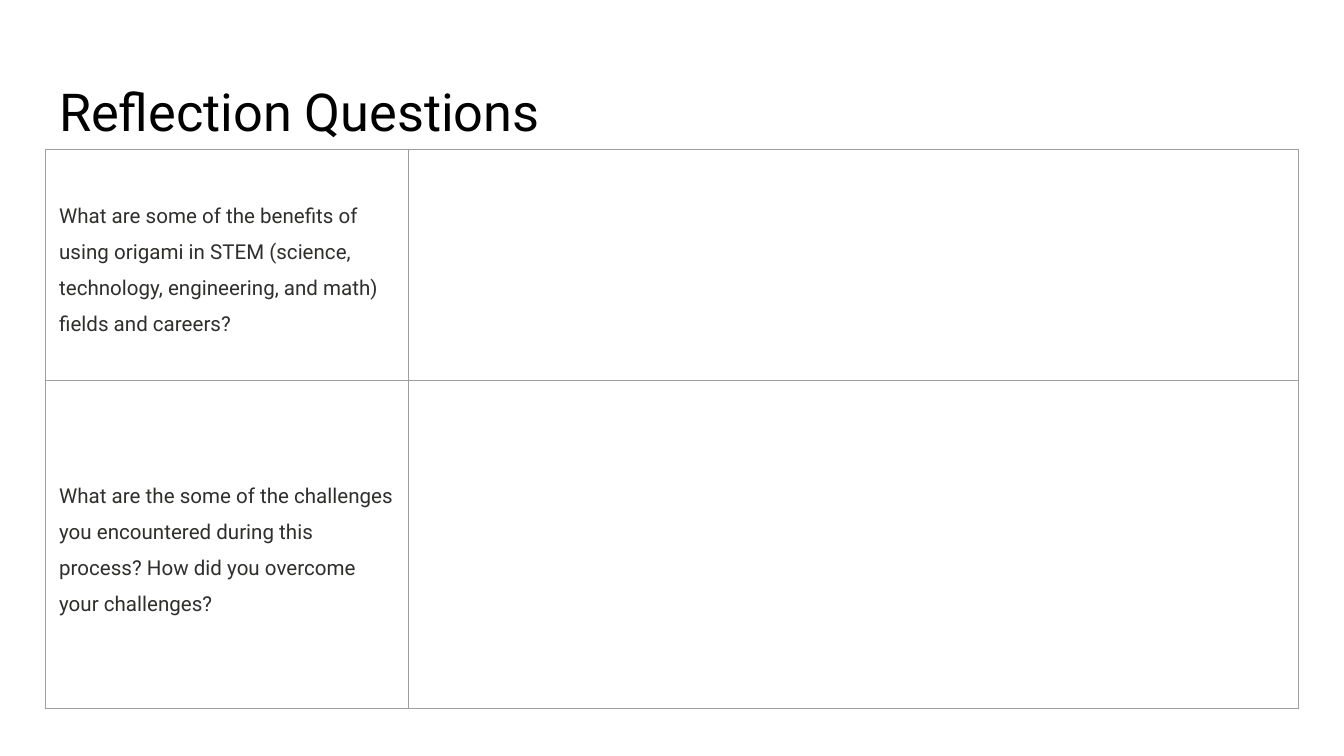
"""Build a reflection worksheet slide with two questions and answer spaces."""
import pptx
import pptx.dml.color
import pptx.enum.text
import pptx.oxml
import pptx.oxml.ns
import pptx.util

Inches = pptx.util.Inches
FONT = "Roboto"
COLORS = {"title": "000000", "question": "2F2E2C", "border": "9E9E9E"}
QUESTIONS = [
    "What are some of the benefits of using origami in STEM "
    "(science, technology, engineering, and math) fields and careers?",
    "What are the some of the challenges you encountered during this process? "
    "How did you overcome your challenges?",
]
COLUMN_WIDTHS = [2.7, 6.62]
ROW_HEIGHTS = [1.72, 2.44]
LEFT = 0.34
WIDTH = sum(COLUMN_WIDTHS)


def format_paragraph(paragraph, size, color):
    paragraph.alignment = pptx.enum.text.PP_ALIGN.LEFT
    for run in paragraph.runs:
        run.font.name = FONT
        run.font.size = pptx.util.Pt(size)
        run.font.color.rgb = pptx.dml.color.RGBColor.from_string(COLORS[color])


def add_borders(cell):
    properties = cell._tc.get_or_add_tcPr()
    for position, side in enumerate(("lnL", "lnR", "lnT", "lnB")):
        border = pptx.oxml.parse_xml(
            f'<a:{side} {pptx.oxml.ns.nsdecls("a")} w="{pptx.util.Pt(0.75)}">'
            f'<a:solidFill><a:srgbClr val="{COLORS["border"]}"/></a:solidFill>'
            f"</a:{side}>"
        )
        properties.insert(position, border)


presentation = pptx.Presentation()
presentation.slide_width = Inches(10)
presentation.slide_height = Inches(10 * 9 / 16)
slide = presentation.slides.add_slide(presentation.slide_layouts[5])

title = slide.shapes.title
title.left, title.top = Inches(LEFT), Inches(0.49)
title.width, title.height = Inches(WIDTH), Inches(0.63)
title_frame = title.text_frame
title_frame.text = "Reflection Questions"
title_frame.auto_size = pptx.enum.text.MSO_AUTO_SIZE.NONE
title_frame.vertical_anchor = pptx.enum.text.MSO_ANCHOR.TOP
title_frame.margin_left = title_frame.margin_right = Inches(0.1)
title_frame.margin_top = title_frame.margin_bottom = Inches(0.1)
format_paragraph(title_frame.paragraphs[0], 28, "title")

table = slide.shapes.add_table(
    len(ROW_HEIGHTS), len(COLUMN_WIDTHS),
    Inches(LEFT), Inches(1.11), Inches(WIDTH), Inches(sum(ROW_HEIGHTS)),
).table
table.first_row = False
table.horz_banding = False
for column, width in zip(table.columns, COLUMN_WIDTHS):
    column.width = Inches(width)
for row, height, question in zip(table.rows, ROW_HEIGHTS, QUESTIONS):
    row.height = Inches(height)
    for cell in row.cells:
        cell.margin_left = cell.margin_right = Inches(0.1)
        cell.margin_top = cell.margin_bottom = Inches(0.1)
        cell.vertical_anchor = pptx.enum.text.MSO_ANCHOR.MIDDLE
        cell.fill.background()
        add_borders(cell)
    question_frame = row.cells[0].text_frame
    question_frame.text = question
    question_frame.paragraphs[0].line_spacing = 1.5
    format_paragraph(question_frame.paragraphs[0], 11, "question")

presentation.save("out.pptx")
